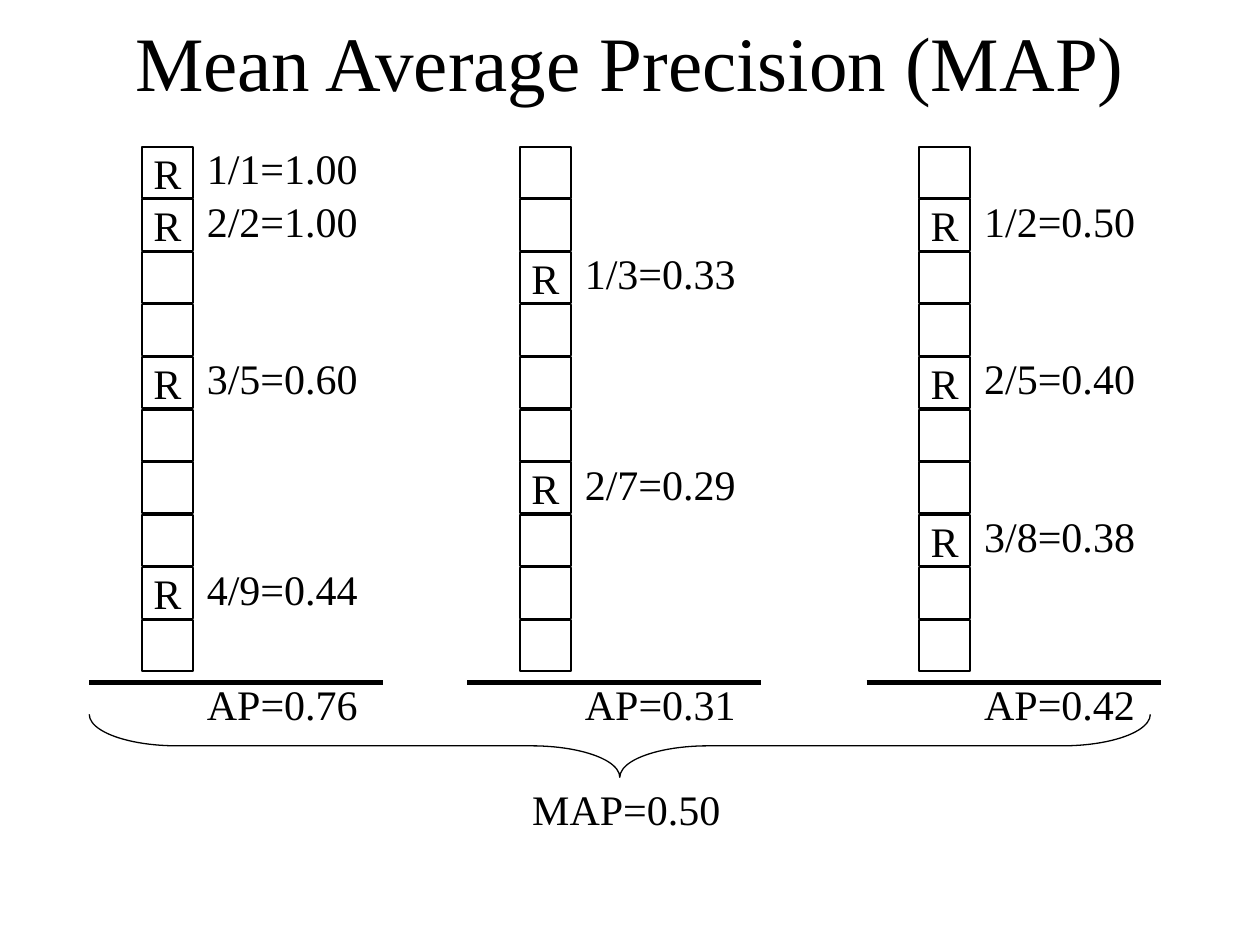
from pptx import Presentation
from pptx.dml.color import RGBColor
from pptx.enum.shapes import MSO_CONNECTOR, MSO_SHAPE
from pptx.enum.text import MSO_ANCHOR, MSO_AUTO_SIZE, PP_ALIGN
from pptx.oxml.xmlchemy import OxmlElement
from pptx.util import Cm, Pt

RECT = MSO_SHAPE.RECTANGLE
BRACE = MSO_SHAPE.LEFT_BRACE
LINE = MSO_CONNECTOR.STRAIGHT
MIDDLE = MSO_ANCHOR.MIDDLE
GROW = MSO_AUTO_SIZE.SHAPE_TO_FIT_TEXT
FIXED = MSO_AUTO_SIZE.NONE
LEFT = PP_ALIGN.LEFT
CENTER = PP_ALIGN.CENTER

COLORS = {"ink": "000000"}
TOP = 2.96
SIDE = 1.03
STEP = 1.06
DEPTH = 10
SUM_TOP = 13.55
RULE_TOP = 13.76
LISTS = [
    (2.86, [1, 2, 5, 9]),
    (10.48, [3, 7]),
    (18.53, [2, 5, 8]),
]


class Deck:
    font = "Times New Roman"
    ink = RGBColor.from_string(COLORS["ink"])

    def __init__(self):
        self.prs = Presentation()
        self.prs.slide_width = Cm(25.4)
        self.prs.slide_height = Cm(19.05)
        self.slide = self.prs.slides.add_slide(self.prs.slide_layouts[5])
        self.shapes = self.slide.shapes

    def group(self):
        self.shapes = self.slide.shapes.add_group_shape().shapes

    def style(self, frame, text, size, align):
        frame.text = text
        para = frame.paragraphs[0]
        para.alignment = align
        font = para.runs[0].font
        font.name = self.font
        font.size = Pt(size)
        font.color.rgb = self.ink

    def title(self, text, x, y, w, h):
        shape = self.slide.shapes.title
        shape.left, shape.top, shape.width, shape.height = Cm(x), Cm(y), Cm(w), Cm(h)
        frame = shape.text_frame
        frame.auto_size = FIXED
        frame.vertical_anchor = MIDDLE
        self.style(frame, text, 44, CENTER)

    def shape(self, kind, x, y, w, h, weight):
        shape = self.shapes.add_shape(kind, Cm(x), Cm(y), Cm(w), Cm(h))
        shape.shadow.inherit = False
        shape.fill.background()
        shape.line.color.rgb = self.ink
        shape.line.width = Pt(weight)
        return shape

    def box(self, x, y, text):
        frame = self.shape(RECT, x, y, SIDE, SIDE, 1).text_frame
        if text:
            frame.word_wrap = False
            frame.vertical_anchor = MIDDLE
            self.style(frame, text, 24, CENTER)

    def label(self, text, x, y, w):
        frame = self.shapes.add_textbox(Cm(x), Cm(y), Cm(w), Cm(1.27)).text_frame
        frame.word_wrap = False
        frame.auto_size = GROW
        self.style(frame, text, 24, LEFT)

    def rule(self, x, y, w):
        line = self.shapes.add_connector(LINE, Cm(x), Cm(y), Cm(x + w), Cm(y))
        line.line.color.rgb = self.ink
        line.line.width = Pt(3)
        line._element.spPr.append(OxmlElement("a:effectLst"))

    def brace(self, x, y, w, h):
        brace = self.shape(BRACE, x, y, w, h, 0.75)
        brace.rotation = 270
        brace.adjustments[0] = 1.4
        brace.adjustments[1] = 0.5

    def ranking(self, x, hits):
        self.group()
        for rank in range(1, DEPTH + 1):
            y = TOP + (rank - 1) * STEP
            self.box(x, y, "R" if rank in hits else "")
        total = 0
        for count, rank in enumerate(hits, 1):
            score = count / rank
            total += score
            y = TOP + (rank - 1) * STEP - 0.21
            self.label(f"{count}/{rank}={score:.2f}", x + STEP, y, 3.56)
        mean = total / len(hits)
        self.label(f"AP={mean:.2f}", x + STEP, SUM_TOP, 3.56)
        self.rule(x - STEP, RULE_TOP, 5.93)
        return mean


def main():
    deck = Deck()
    deck.title("Mean Average Precision (MAP)", 1.9, -0.1, 21.6, 2.64)
    means = [deck.ranking(x, hits) for x, hits in LISTS]
    deck.group()
    deck.brace(11.86, 4.34, 1.27, 21.39)
    deck.label(f"MAP={sum(means) / len(means):.2f}", 10.48, 15.67, 4.32)
    deck.prs.save("out.pptx")


if __name__ == "__main__":
    main()
